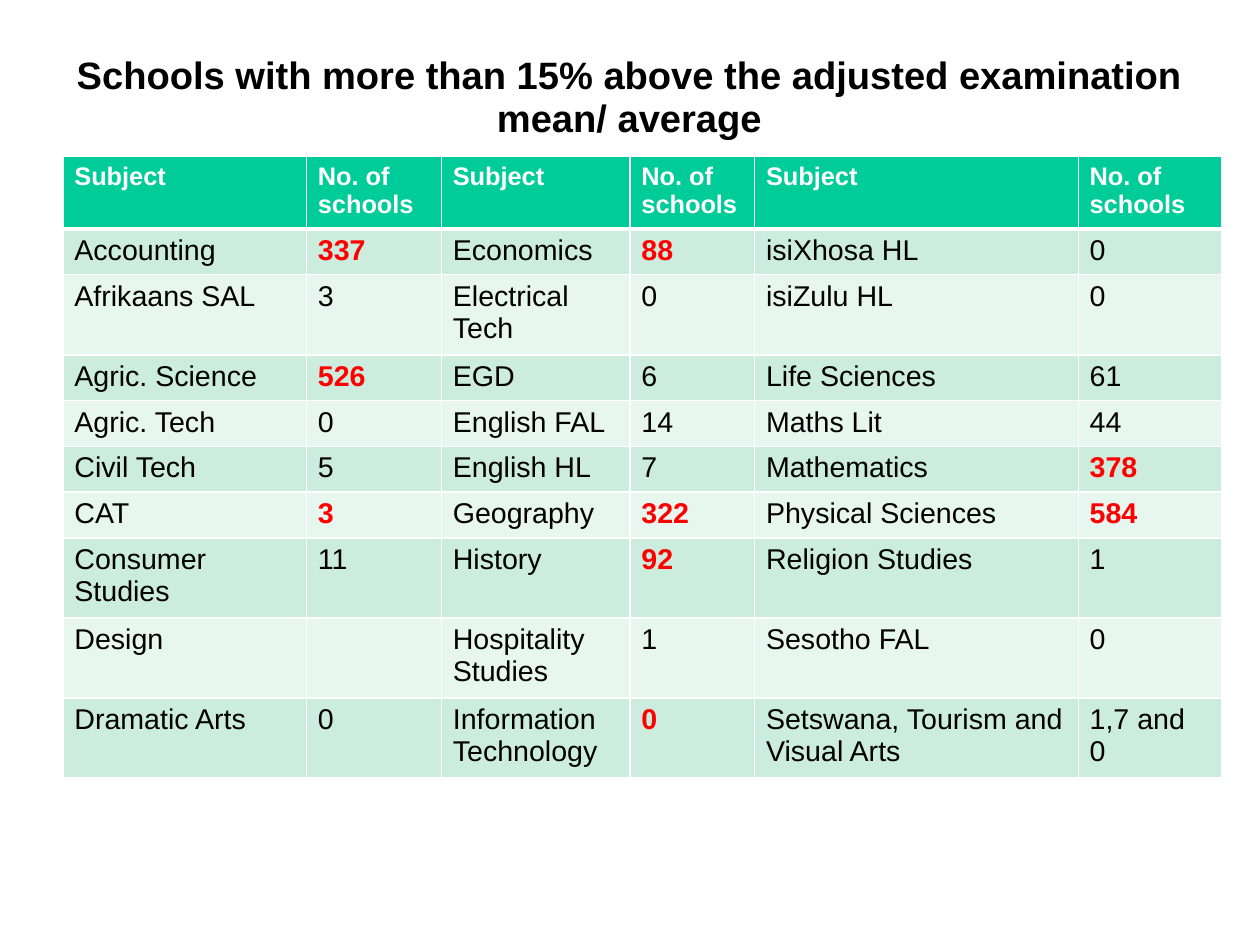
from lxml.etree import SubElement
from pptx import Presentation
from pptx.dml.color import RGBColor
from pptx.enum.text import MSO_ANCHOR, PP_ALIGN
from pptx.oxml.ns import qn
from pptx.util import Cm, Pt

# Content
TITLE = "Schools with more than 15% above the adjusted examination mean/ average"
HEADINGS = ("Subject", "No. of schools") * 3
RESULTS = [
    ("Accounting", "337", "Economics", "88", "isiXhosa HL", "0"),
    ("Afrikaans SAL", "3", "Electrical Tech", "0", "isiZulu HL", "0"),
    ("Agric. Science", "526", "EGD", "6", "Life Sciences", "61"),
    ("Agric. Tech", "0", "English FAL", "14", "Maths Lit", "44"),
    ("Civil Tech", "5", "English HL", "7", "Mathematics", "378"),
    ("CAT", "3", "Geography", "322", "Physical Sciences", "584"),
    ("Consumer Studies", "11", "History", "92", "Religion Studies", "1"),
    ("Design", "", "Hospitality Studies", "1", "Sesotho FAL", "0"),
    ("Dramatic Arts", "0", "Information Technology", "0",
     "Setswana, Tourism and Visual Arts", "1,7 and\n0"),
]
FLAGGED_SUBJECTS = {
    "Accounting", "Agric. Science", "CAT", "Economics", "Geography", "History",
    "Information Technology", "Mathematics", "Physical Sciences",
}
TWO_LINE_SUBJECTS = {
    "Afrikaans SAL", "Consumer Studies", "Design", "Dramatic Arts",
}

# Formats
BLACK = RGBColor(0x00, 0x00, 0x00)
WHITE = RGBColor(0xFF, 0xFF, 0xFF)
RED = RGBColor(0xFF, 0x00, 0x00)
GREEN = RGBColor(0x00, 0xCC, 0x99)
BANDS = (RGBColor(0xCC, 0xEC, 0xDE), RGBColor(0xE7, 0xF6, 0xEF))

TITLE_FONT = {"name": "Arial", "size": Pt(24), "bold": True, "color": BLACK}
HEADING_FONT = {"name": "Arial", "size": Pt(16), "bold": True, "color": WHITE}
BODY_FONT = {"name": "Arial", "size": Pt(18), "bold": False, "color": BLACK}
FLAGGED_FONT = {**BODY_FONT, "bold": True, "color": RED}

# Layout in centimetres
LEFT = 1.4
TITLE_TOP, TITLE_WIDTH, TITLE_HEIGHT = 0.89, 25.17, 2.59
TABLE_TOP = TITLE_TOP + TITLE_HEIGHT
COLUMN_WIDTHS = (5.41, 3, 4.19, 2.77, 7.19, 3.18)
HEADING_HEIGHT, ONE_LINE, TWO_LINES = 1.54, 0.99, 1.71
ROW_HEIGHTS = [HEADING_HEIGHT] + [
    TWO_LINES if row[0] in TWO_LINE_SUBJECTS else ONE_LINE for row in RESULTS
]
THIN, THICK = Pt(1), Pt(3)


def format_text(frame, font_values):
    for paragraph in frame.paragraphs:
        for attribute, value in font_values.items():
            if attribute == "color":
                paragraph.font.color.rgb = value
            else:
                setattr(paragraph.font, attribute, value)


def add_borders(cell, widths):
    properties = cell._tc.get_or_add_tcPr()
    for side, width in widths.items():
        line = SubElement(properties, qn(f"a:ln{side}"), w=str(width))
        SubElement(SubElement(line, qn("a:solidFill")), qn("a:srgbClr"), val=str(WHITE))


def add_title(slide):
    frame = slide.shapes.add_textbox(
        Cm(LEFT), Cm(TITLE_TOP), Cm(TITLE_WIDTH), Cm(TITLE_HEIGHT)).text_frame
    frame_values = {
        "text": TITLE, "word_wrap": True, "vertical_anchor": MSO_ANCHOR.MIDDLE,
        "margin_left": 0, "margin_right": 0, "margin_top": 0, "margin_bottom": 0,
    }
    for attribute, value in frame_values.items():
        setattr(frame, attribute, value)
    frame.paragraphs[0].alignment = PP_ALIGN.CENTER
    frame.paragraphs[0].line_spacing = 0.93
    format_text(frame, TITLE_FONT)


def add_results(slide):
    rows = [HEADINGS, *RESULTS]
    table = slide.shapes.add_table(
        len(rows), len(HEADINGS), Cm(LEFT), Cm(TABLE_TOP),
        Cm(sum(COLUMN_WIDTHS)), Cm(sum(ROW_HEIGHTS))).table
    table.horz_banding = False
    for column, width in zip(table.columns, COLUMN_WIDTHS):
        column.width = Cm(width)
    for r, (row, height) in enumerate(zip(rows, ROW_HEIGHTS)):
        table.rows[r].height = Cm(height)
        for c, text in enumerate(row):
            cell = table.cell(r, c)
            cell.text = text
            # The rule under the headings is thicker than the others
            add_borders(cell, {"L": THIN, "R": THIN,
                               "T": THICK if r == 1 else THIN,
                               "B": THICK if r == 0 else THIN})
            cell.fill.solid()
            cell.fill.fore_color.rgb = BANDS[(r - 1) % 2] if r else GREEN
            flagged = c % 2 == 1 and row[c - 1] in FLAGGED_SUBJECTS
            body_font = FLAGGED_FONT if flagged else BODY_FONT
            format_text(cell.text_frame, body_font if r else HEADING_FONT)


def main():
    deck = Presentation()
    deck.slide_width, deck.slide_height = Cm(28), Cm(21)
    slide = deck.slides.add_slide(deck.slide_layouts[6])
    add_title(slide)
    add_results(slide)
    deck.save("out.pptx")


if __name__ == "__main__":
    main()
